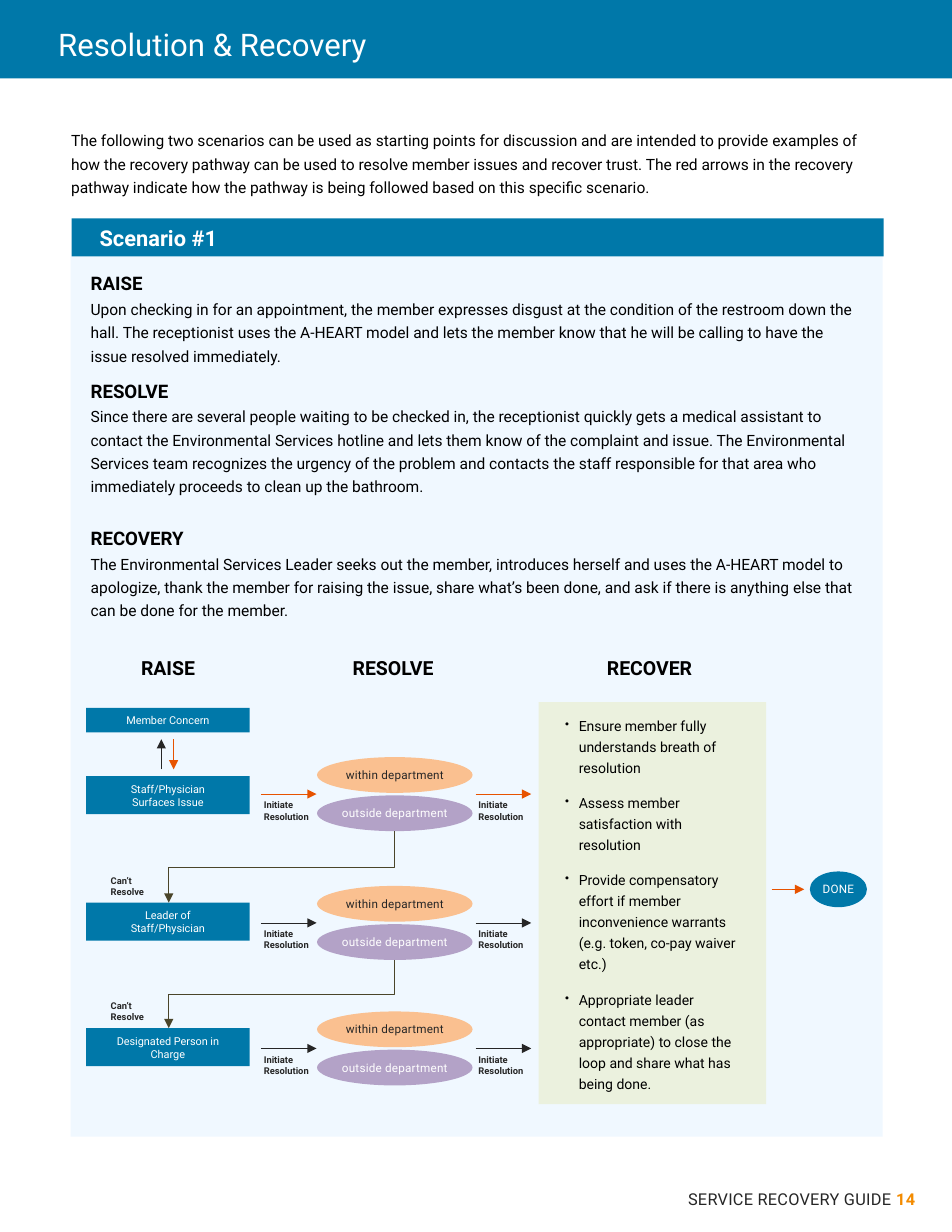
from lxml.etree import SubElement
from pptx import Presentation
from pptx.dml.color import RGBColor
from pptx.enum.shapes import MSO_CONNECTOR, MSO_SHAPE
from pptx.enum.text import MSO_ANCHOR, PP_ALIGN
from pptx.oxml.ns import qn
from pptx.util import Pt

BLUE, ORANGE, INK, BLACK, WHITE = "0078A9", "E75300", "262626", "000000", "FFFFFF"
PEACH, PURPLE, GREEN, BROWN = "FAC090", "B3A2C7", "EBF1DE", "4A452A"

INTRO = ("The following two scenarios can be used as starting points for discussion and are "
         "intended to provide examples of how the recovery pathway can be used to resolve member "
         "issues and recover trust. The red arrows in the recovery pathway indicate how the "
         "pathway is being followed based on this specific scenario.")
# heading, space before it, story
STORY = [
    ("RAISE", 0,
     "Upon checking in for an appointment, the member expresses disgust at the condition of the "
     "restroom down the hall. The receptionist uses the A-HEART model and lets the member know "
     "that he will be calling to have the issue resolved immediately."),
    ("RESOLVE", 9,
     "Since there are several people waiting to be checked in, the receptionist quickly gets a "
     "medical assistant to contact the Environmental Services hotline and lets them know of the "
     "complaint and issue. The Environmental Services team recognizes the urgency of the problem "
     "and contacts the staff responsible for that area who immediately proceeds to clean up the "
     "bathroom."),
    ("RECOVERY", 19.7,
     "The Environmental Services Leader seeks out the member, introduces herself and uses the "
     "A-HEART model to apologize, thank the member for raising the issue, share what’s been done, "
     "and ask if there is anything else that can be done for the member."),
]
RECOVER_STEPS = [
    "Ensure member fully understands breath of resolution",
    "Assess member satisfaction with resolution",
    "Provide compensatory effort if member inconvenience warrants (e.g. token, co-pay waiver etc.)",
    "Appropriate leader contact member (as appropriate) to close the loop and share what has "
    "being done.",
]
# box text, box top, top of the ellipses, arrow colour
LEVELS = [
    ("Staff/Physician Surfaces Issue", 499, 486.7, ORANGE),
    ("Leader of Staff/Physician", 580.3, 569.5, INK),
    ("Designated Person in Charge", 661, 650.2, INK),
]


def color(code):
    return RGBColor.from_string(code)


def set_frame(shape, insets, anchor, wrap):
    frame = shape.text_frame
    frame.word_wrap = wrap
    frame.vertical_anchor = anchor
    frame.margin_left, frame.margin_top, frame.margin_right, frame.margin_bottom = map(Pt, insets)


def add_box(page, left, top, width, height, fill, kind=MSO_SHAPE.RECTANGLE, alpha=None,
            insets=(0, 0, 0, 0), anchor=MSO_ANCHOR.MIDDLE, wrap=True):
    box = page.shapes.add_shape(kind, Pt(left), Pt(top), Pt(width), Pt(height))
    box.shadow.inherit = False
    box.fill.solid()
    box.fill.fore_color.rgb = color(fill)
    box.line.fill.background()
    if alpha:
        tint = box.fill._xPr.find(qn("a:solidFill"))[0]
        SubElement(tint, qn("a:alpha"), val=str(alpha * 1000))
    set_frame(box, insets, anchor, wrap)
    return box


def add_area(page, left, top, width, height, insets=(0.7, 0.7, 0, 0),
             anchor=MSO_ANCHOR.TOP, wrap=True):
    area = page.shapes.add_textbox(Pt(left), Pt(top), Pt(width), Pt(height))
    set_frame(area, insets, anchor, wrap)
    return area


def write(shape, text, size=10, ink=BLACK, bold=False, align=PP_ALIGN.LEFT, before=0,
          line=None, spacing=0, bullet=False, same_line=False):
    """Add one paragraph, or one more span to the last paragraph."""
    frame = shape.text_frame
    para = frame.paragraphs[-1]
    if para.runs and not same_line:
        para = frame.add_paragraph()
    para.alignment = align
    if before:
        para.space_before = Pt(before)
    if line:
        para.line_spacing = line
    if bullet:
        props = para._p.get_or_add_pPr()
        props.set("marL", str(Pt(18.7)))
        props.set("indent", str(Pt(-8.7)))
        SubElement(props, qn("a:buSzPct"), val="83000")
        SubElement(props, qn("a:buChar"), char="•")
    span = para.add_run()
    span.text = text
    font = span.font
    font.name, font.size, font.bold = "Roboto", Pt(size), bold
    font.color.rgb = color(ink)
    if spacing:
        span._r.get_or_add_rPr().set("spc", str(round(spacing * 100)))


def add_arrow(page, start, end, ink, width=0.5, kind=MSO_CONNECTOR.STRAIGHT):
    arrow = page.shapes.add_connector(kind, *map(Pt, (*start, *end)))
    arrow.line.color.rgb = color(ink)
    arrow.line.width = Pt(width)
    SubElement(arrow.line._get_or_add_ln(), qn("a:tailEnd"), type="triangle")
    SubElement(arrow._element.spPr, qn("a:effectLst"))
    return arrow


def add_step_down(page, start, end):
    """Elbow arrow that leaves downwards, crosses to the left and ends downwards."""
    (x1, y1), (x2, y2) = start, end
    middle_x, middle_y = (x1 + x2) / 2, (y1 + y2) / 2
    half_width, half_height = (y2 - y1) / 2, (x1 - x2) / 2
    arrow = add_arrow(page, (middle_x - half_width, middle_y - half_height),
                      (middle_x + half_width, middle_y + half_height), BROWN,
                      kind=MSO_CONNECTOR.ELBOW)
    arrow._element.spPr.find(qn("a:xfrm")).set("rot", "5400000")


def add_label(page, left, top, width, lines):
    label = add_area(page, left, top, width, 21.6, insets=(7.2, 3.6, 7.2, 3.6), wrap=False)
    for text in lines:
        write(label, text, size=6, ink=INK, bold=True)


def add_task(page, top, height, text):
    box = add_box(page, 55.4, top, 105.1, height, BLUE, insets=(17, 0, 17, 0))
    write(box, text, size=7, ink=WHITE, align=PP_ALIGN.CENTER)


def add_oval(page, left, top, width, fill, text, ink):
    oval = add_box(page, left, top, width, 23, fill, kind=MSO_SHAPE.OVAL, wrap=False)
    write(oval, text, size=7.5, ink=ink, align=PP_ALIGN.CENTER, spacing=0.1)


def add_story(page):
    add_box(page, 45.4, 164.9, 522, 565.9, "B4DCFF", alpha=20)
    area = add_area(page, 57.6, 170.6, 496.8, 246.2, insets=(0.7, 4.3, 4, 0))
    for heading, before, story in STORY:
        write(area, heading, size=12, bold=True, before=before)
        write(area, story, before=0.6, line=Pt(15))
    bar = add_box(page, 46, 140.4, 522, 24.5, BLUE, insets=(18, 0, 0, 0))
    write(bar, "Scenario #1", size=14, ink=WHITE, bold=True)


def add_pathway(page):
    # Column headings
    for heading, left, width in (("RAISE", 90, 47.5), ("RESOLVE", 226, 60), ("RECOVER", 389.5, 67)):
        area = add_area(page, left, 421.2, width, 15.8, wrap=False)
        write(area, heading, size=12.5, bold=True)

    # Concern and the arrows below it
    add_task(page, 455, 15.8, "Member Concern")
    add_arrow(page, (103.7, 494.6), (103.7, 475.2), INK)
    add_arrow(page, (111.6, 475.2), (111.6, 494.6), ORANGE)

    # Levels of escalation
    previous_bottom = None
    for text, box_top, oval_top, ink in LEVELS:
        add_task(page, box_top, 24.5, text)
        add_oval(page, 203.8, oval_top, 100, PEACH, "within department", INK)
        add_oval(page, 203.8, oval_top + 24.6, 100, PURPLE, "outside department", WHITE)
        arrow_y = oval_top + 23.8
        for left in (167.8, 305.8):
            add_label(page, left - 5.3, arrow_y, 46, ("Initiate", "Resolution"))
            add_arrow(page, (left, arrow_y), (left + 35.7, arrow_y), ink)
        if previous_bottom:
            add_label(page, 64.1, box_top - 21.4, 37.4, ("Can’t", "Resolve"))
            add_step_down(page, (253.6, previous_bottom), (108.5, box_top))
        previous_bottom = oval_top + 47.6

    # Recovery steps and the end
    panel = add_box(page, 346.3, 451.4, 146.2, 258.5, GREEN, insets=(7.2, 7.2, 16.8, 7.2),
                    anchor=MSO_ANCHOR.TOP)
    for number, step in enumerate(RECOVER_STEPS):
        write(panel, step, size=9, before=9 if number else 0, line=1.25, bullet=True)
    add_arrow(page, (496.1, 571.7), (517, 571.7), ORANGE)
    add_oval(page, 520.6, 560.2, 36.7, BLUE, "DONE", WHITE)


def main():
    deck = Presentation()
    deck.slide_width, deck.slide_height = Pt(612), Pt(792)
    page = deck.slides.add_slide(deck.slide_layouts[6])

    # Title band
    add_box(page, 0, 0, 612, 50.4, BLUE)
    title = add_area(page, 37.4, 15.1, 538.6, 25.2, insets=(0, 0.7, 0, 0),
                     anchor=MSO_ANCHOR.MIDDLE)
    write(title, "Resolution & Recovery", size=20, ink=WHITE)

    # Body
    write(add_area(page, 45, 80.6, 522, 45.4), INTRO, line=1.25)
    add_story(page)
    add_pathway(page)

    # Footer
    footer = add_area(page, 18, 761, 577.4, 20.2, insets=(7.2, 3.6, 7.2, 3.6))
    write(footer, "SERVICE RECOVERY GUIDE ", size=10.5, ink=INK, align=PP_ALIGN.RIGHT, spacing=0.2)
    write(footer, "14", size=10.5, ink="F38B00", bold=True, align=PP_ALIGN.RIGHT, spacing=0.2,
          same_line=True)

    deck.save("out.pptx")


if __name__ == "__main__":
    main()
